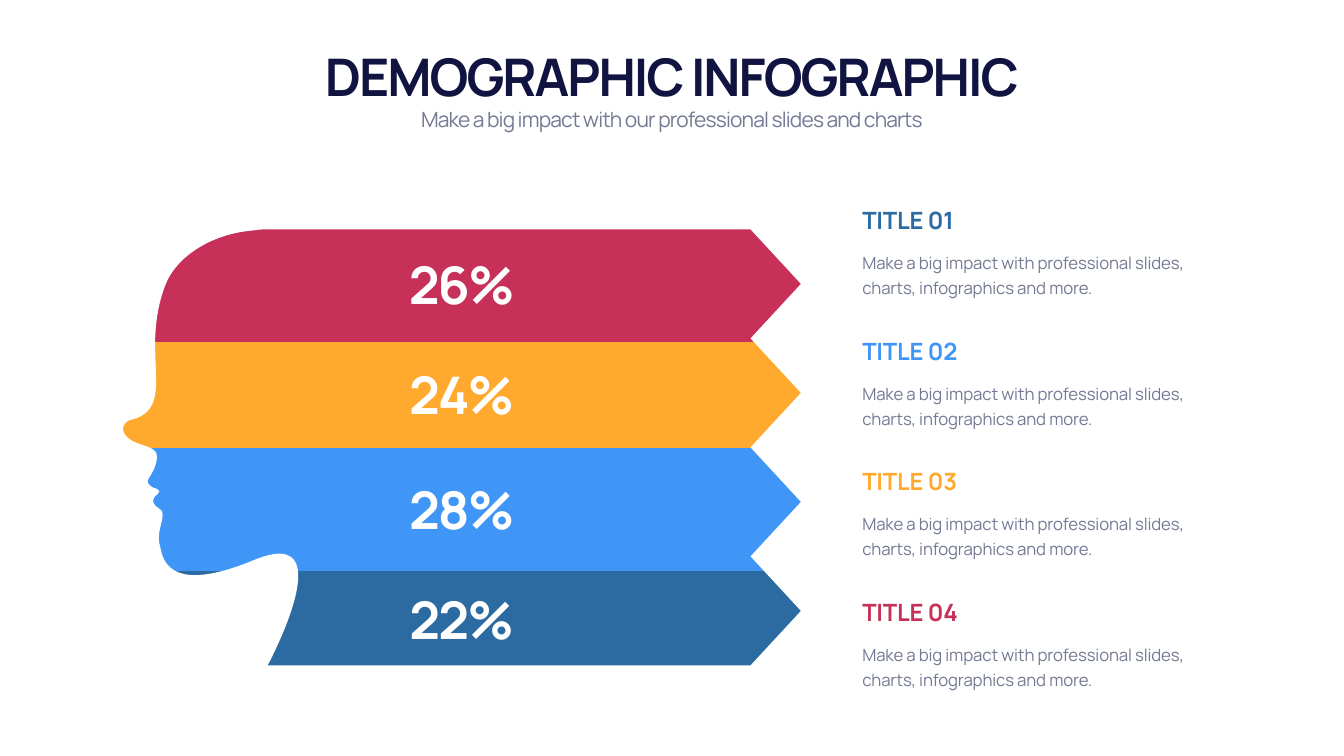
from lxml import etree
from pptx import Presentation
from pptx.chart.data import CategoryChartData
from pptx.dml.color import RGBColor
from pptx.enum.chart import XL_CHART_TYPE, XL_LABEL_POSITION
from pptx.enum.text import MSO_ANCHOR, MSO_AUTO_SIZE, PP_ALIGN
from pptx.oxml import parse_xml
from pptx.oxml.ns import nsdecls, qn
from pptx.util import Cm, Pt

STACKED = XL_CHART_TYPE.COLUMN_STACKED_100
MIDDLE = XL_LABEL_POSITION.CENTER
TOP, BOTTOM = MSO_ANCHOR.TOP, MSO_ANCHOR.BOTTOM
GROW = MSO_AUTO_SIZE.SHAPE_TO_FIT_TEXT
LEFT, CENTER = PP_ALIGN.LEFT, PP_ALIGN.CENTER

NAVY = RGBColor(0x11, 0x13, 0x40)
GREY = RGBColor(0x74, 0x79, 0x94)
TEAL = RGBColor(0x2B, 0x6B, 0xA1)
BLUE = RGBColor(0x3F, 0x96, 0xF7)
GOLD = RGBColor(0xFF, 0xAA, 0x2E)
ROSE = RGBColor(0xC7, 0x30, 0x59)
WHITE = RGBColor(0xFF, 0xFF, 0xFF)

FONT = "Manrope"
BANDS = [(0.22, TEAL), (0.28, BLUE), (0.24, GOLD), (0.26, ROSE)]
BODY = "Make a big impact with professional slides, charts, infographics and more."

GRID = 1370
CROWN, NECK = (302, 17), (299, 882)
NOTCH, TIP = 1257, 1357
FACE = [
    (292, 17, 281, 17, 271, 19), (165, 28, 119, 90, 119, 90),
    (108, 102, 99, 118, 93, 136), (81, 171, 77, 203, 76, 233),
    (74, 317, 96, 379, 27, 395), (19, 397, 13, 404, 12, 412),
    (12, 417, 14, 422, 20, 429), (32, 440, 50, 444, 63, 449),
    (70, 452, 75, 455, 78, 460), (83, 475, 73, 495, 68, 503),
    (67, 505, 66, 507, 65, 508), (63, 511, 61, 514, 61, 516),
    (60, 521, 68, 530, 80, 532), (85, 533, 86, 540, 81, 542),
    (70, 548, 67, 561, 84, 571), (102, 579, 78, 613, 84, 639),
    (86, 645, 87, 655, 91, 666), (103, 696, 139, 728, 272, 673),
    (279, 670, 285, 668, 291, 666), (317, 658, 333, 659, 344, 666),
    (397, 700, 299, 882, 299, 882),
]


def add_text(slide, box, text, size, color, bold=False, space=0,
             align=LEFT, anchor=TOP, line=None):
    """Add a text box that holds one run."""
    frame = slide.shapes.add_textbox(*[Cm(side) for side in box]).text_frame
    frame.word_wrap = True
    frame.auto_size = GROW
    frame.vertical_anchor = anchor
    para = frame.paragraphs[0]
    para.alignment = align
    if line:
        para.line_spacing = Pt(line)
    run = para.add_run()
    run.text = text
    font = run.font
    font.name, font.size, font.bold = FONT, Pt(size), bold
    font.color.rgb = color
    run._r.get_or_add_rPr().set("spc", str(round(space * 100)))


def add_header(slide, left, top, width):
    """Place the slide title and its subtitle."""
    add_text(slide, (left, top, width, 3.43), "DEMOGRAPHIC INFOGRAPHIC",
             74, NAVY, True, -2.9, CENTER, BOTTOM)
    add_text(slide, (left, top + 3.18, width, 1.55),
             "Make a big impact with our professional slides and charts",
             30, GREY, space=-1.2, align=CENTER)


def add_notes(slide, left, top, width, pitch):
    """Place the column of titled notes at an even pitch."""
    for row, (_, color) in enumerate(BANDS):
        head = top + row * pitch
        add_text(slide, (left, head, width, 1.7), f"TITLE {row + 1:02}",
                 34, color, True, -0.3, anchor=BOTTOM)
        add_text(slide, (left, head + 2.12, width, 2.77), BODY,
                 24, GREY, space=-0.2, line=36)


def add_chart(slide, left, top, width, height):
    """Place the stacked column that colours the head."""
    data = CategoryChartData(number_format="0%")
    data.categories = ["1"]
    for row, (value, _) in enumerate(BANDS, 1):
        data.add_series(f"Series {row}", [value])
    box = [Cm(side) for side in (left, top, width, height)]
    chart = slide.shapes.add_chart(STACKED, *box, data).chart
    chart.has_legend = chart.has_title = False
    plot = chart.plots[0]
    plot.gap_width, plot.overlap = 0, 100
    plot.vary_by_categories = False
    plot.has_data_labels = True
    labels = plot.data_labels
    labels.show_value = True
    labels.position = MIDDLE
    labels.number_format = "0%"
    labels.number_format_is_linked = False
    for font in (chart.font, labels.font):
        font.name, font.size, font.bold = FONT, Pt(74), True
        font.color.rgb = WHITE
        font._rPr.set("spc", "-290")
    for series, (_, color) in zip(plot.series, BANDS):
        series.format.fill.solid()
        series.format.fill.fore_color.rgb = color
    scale = chart.value_axis
    scale.minimum_scale, scale.maximum_scale = 0, 1
    scale.has_major_gridlines = False
    scale.visible = chart.category_axis.visible = False
    area = chart._chartSpace.chart.plotArea
    for old in area.findall(qn("c:layout")):
        area.remove(old)
    layout = parse_xml(f"<c:layout {nsdecls('c')}/>")
    manual = etree.SubElement(layout, qn("c:manualLayout"))
    parts = [("layoutTarget", "inner"), ("xMode", "edge"), ("yMode", "edge"),
             ("x", "0"), ("y", "0"), ("w", "1"), ("h", "1")]
    for name, value in parts:
        etree.SubElement(manual, qn(f"c:{name}")).set("val", value)
    area.insert(0, layout)


def bend_face(mask, unit):
    """Turn the first lines of the mask into the curves of the face."""
    lines = list(mask._element.iter(qn("a:lnTo")))
    for line, (ax, ay, bx, by, _, _) in zip(lines, FACE):
        curve = etree.Element(qn("a:cubicBezTo"))
        for x, y in ((ax, ay), (bx, by)):
            spot = etree.SubElement(curve, qn("a:pt"))
            spot.set("x", str(Cm(x * unit)))
            spot.set("y", str(Cm(y * unit)))
        curve.append(line[0])
        line.getparent().replace(line, curve)


def add_mask(slide, left, top, width, height):
    """Cover the box in white, leaving a hole shaped like a head."""
    unit = width / GRID

    def place(x, y):
        """Turn grid units into slide lengths."""
        return Cm(left + x * unit), Cm(top + y * unit)

    rise = (NECK[1] - CROWN[1]) / 8
    teeth = [(TIP if k % 2 else NOTCH, NECK[1] - k * rise) for k in range(9)]
    face = [curve[4:] for curve in FACE]
    deep = height / unit
    build = slide.shapes.build_freeform(*place(*CROWN))
    build.add_line_segments([place(*spot) for spot in face + teeth])
    build.move_to(*place(0, 0))
    build.add_line_segments(
        [place(*spot) for spot in ((GRID, 0), (GRID, deep), (0, deep))])
    mask = build.convert_to_shape()
    bend_face(mask, unit)
    mask.shadow.inherit = False
    mask.fill.solid()
    mask.fill.fore_color.rgb = WHITE
    mask.line.fill.background()


def main():
    """Build the slide and save it."""
    deck = Presentation()
    deck.slide_width, deck.slide_height = Cm(67.72), Cm(38.1)
    slide = deck.slides.add_slide(deck.slide_layouts[6])
    add_header(slide, 4.22, 2.08, 59.26)
    add_notes(slide, 43.2, 10.24, 18.57, 6.58)
    add_chart(slide, 5.89, 11.46, 34.76, 22.2)
    add_mask(slide, 5.89, 11.13, 34.8, 22.86)
    deck.save("out.pptx")


if __name__ == "__main__":
    main()
